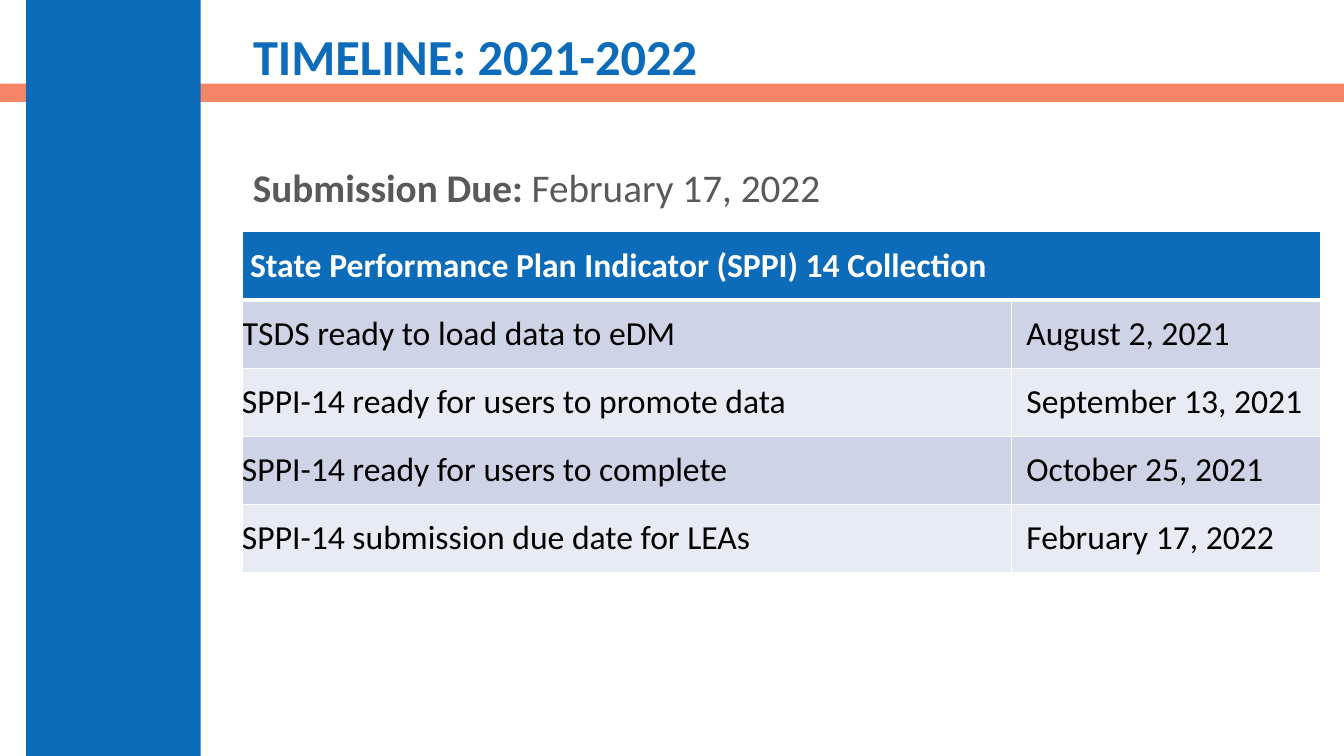
from lxml.etree import SubElement
from pptx import Presentation
from pptx.dml.color import RGBColor
from pptx.enum.shapes import MSO_SHAPE
from pptx.enum.text import MSO_ANCHOR, MSO_AUTO_SIZE, PP_ALIGN
from pptx.oxml.ns import qn
from pptx.util import Inches, Pt

BLUE = "0D6CB9"
WHITE = "FFFFFF"


def paint(fill, color):
    fill.solid()
    fill.fore_color.rgb = RGBColor.from_string(color)


def add_run(paragraph, text, size, color, bold):
    run = paragraph.add_run()
    run.text = text
    run.font.name = "Calibri"
    run.font.size = Pt(size)
    run.font.bold = bold
    run.font.color.rgb = RGBColor.from_string(color)


presentation = Presentation()
presentation.slide_width = Inches(13.33)
presentation.slide_height = Inches(7.5)
slide = presentation.slides.add_slide(presentation.slide_layouts[5])

bands = []
for left, top, width, height, color in [
    (0, 0.83, 13.33, 0.18, "F16038"),
    (0.26, 0, 1.73, 7.5, BLUE),
]:
    band = slide.shapes.add_shape(
        MSO_SHAPE.RECTANGLE, Inches(left), Inches(top), Inches(width), Inches(height)
    )
    band.shadow.inherit = False
    band.line.fill.background()
    paint(band.fill, color)
    bands.append(band)
stripe_color = bands[0].fill._xPr.find(qn("a:solidFill"))[0]
SubElement(stripe_color, qn("a:alpha"), val="76000")

title = slide.shapes.title
title.left, title.top = Inches(2.41), Inches(0.18)
title.width, title.height = Inches(10.53), Inches(0.82)
title.text_frame.vertical_anchor = MSO_ANCHOR.MIDDLE
title.text_frame.auto_size = MSO_AUTO_SIZE.NONE
heading = title.text_frame.paragraphs[0]
heading.alignment = PP_ALIGN.LEFT
heading.line_spacing = 0.9
add_run(heading, "TIMELINE: 2021-2022", 36, BLUE, True)
slide.shapes._spTree.append(title._element)

due_box = slide.shapes.add_textbox(Inches(2.41), Inches(1.62), Inches(9.83), Inches(0.55))
due_box.text_frame.word_wrap = True
due_line = due_box.text_frame.paragraphs[0]
due_line.line_spacing = 0.9
add_run(due_line, "Submission Due: ", 28, "595959", True)
add_run(due_line, "February 17, 2022", 28, "595959", False)

milestones = [
    ("State Performance Plan Indicator (SPPI) 14 Collection", ""),
    ("TSDS ready to load data to eDM", "August 2, 2021"),
    ("SPPI-14 ready for users to promote data", "September 13, 2021"),
    ("SPPI-14 ready for users to complete", "October 25, 2021"),
    ("SPPI-14 submission due date for LEAs", "February 17, 2022"),
]
timeline = slide.shapes.add_table(
    len(milestones), 2, Inches(2.4), Inches(2.3), Inches(10.7), Inches(3.38)
).table
timeline.columns[0].width = Inches(7.63)
timeline.columns[1].width = Inches(3.07)
timeline.cell(0, 0).merge(timeline.cell(0, 1))

for row, milestone in enumerate(milestones):
    is_header = row == 0
    row_color = BLUE if is_header else ("E7EBF3", "CCD4E6")[row % 2]
    for column, text in enumerate(milestone):
        cell = timeline.cell(row, column)
        cell.vertical_anchor = MSO_ANCHOR.MIDDLE
        cell.margin_top = cell.margin_right = cell.margin_bottom = 0
        cell.margin_left = Inches(0.08 if is_header else 0.15 * column)
        for side in "LRTB":
            thick = (row, side) in [(0, "B"), (1, "T")]
            border = SubElement(
                cell._tc.get_or_add_tcPr(), qn(f"a:ln{side}"), w=str(Pt(3 if thick else 1))
            )
            SubElement(SubElement(border, qn("a:solidFill")), qn("a:srgbClr"), val=WHITE)
        paint(cell.fill, row_color)
        if text:
            add_run(
                cell.text_frame.paragraphs[0], text, 24,
                WHITE if is_header else "000000", is_header,
            )

presentation.save("out.pptx")
